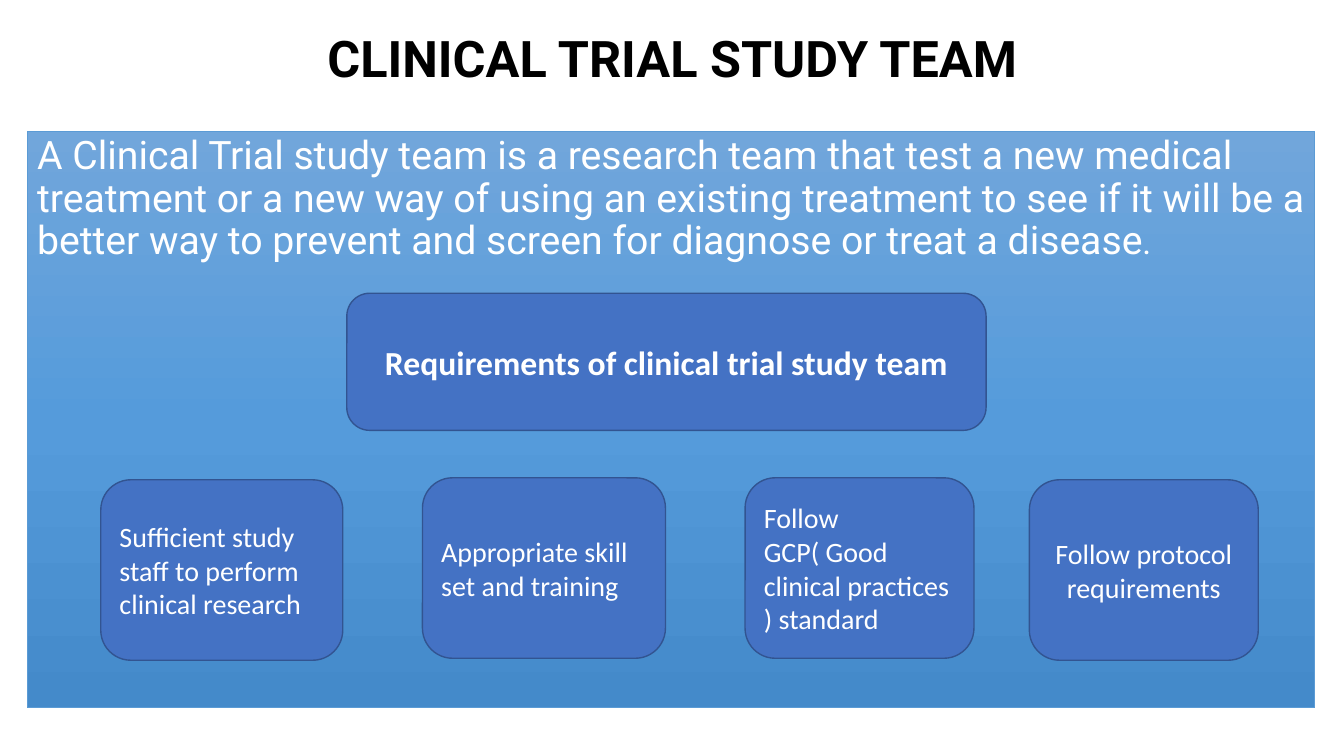
from copy import deepcopy

from pptx import Presentation
from pptx.dml.color import RGBColor
from pptx.enum import shapes, text
from pptx.util import Inches, Pt

BLACK = RGBColor(0x00, 0x00, 0x00)
WHITE = RGBColor(0xFF, 0xFF, 0xFF)
BOX_BLUE = RGBColor(0x44, 0x72, 0xC4)
BOX_EDGE = RGBColor(0x32, 0x54, 0x91)
PANEL_EDGE = RGBColor(0x5B, 0x9B, 0xD5)
PANEL_STOPS = [
    (0, RGBColor(0x71, 0xA6, 0xDB)),
    (0.5, RGBColor(0x55, 0x9B, 0xDB)),
    (1, RGBColor(0x44, 0x8A, 0xCA)),
]

LEFT, CENTER = text.PP_ALIGN.LEFT, text.PP_ALIGN.CENTER
TOP, MIDDLE, BOTTOM = text.MSO_ANCHOR.TOP, text.MSO_ANCHOR.MIDDLE, text.MSO_ANCHOR.BOTTOM

TITLE = "CLINICAL TRIAL STUDY TEAM"
DEFINITION = (
    "A Clinical Trial study team is a research team that test a new medical "
    "treatment or a new way of using an existing treatment to see if it will be a "
    "better way to prevent and screen for diagnose or treat a disease"
)
HEADING = "Requirements of clinical trial study team"
# Wording, left and top within the panel, width, alignment
REQUIREMENTS = [
    ("Sufficient study staff to perform clinical research", 0.73, 3.46, 2.4, LEFT),
    ("Appropriate skill set and training", 3.92, 3.44, 2.41, LEFT),
    ("Follow GCP( Good clinical practices ) standard", 7.12, 3.44, 2.27, LEFT),
    ("Follow protocol requirements", 9.94, 3.46, 2.27, CENTER),
]


def add_run(paragraph, words, **font_format):
    run = paragraph.add_run()
    run.text = words
    color = font_format.pop("color", WHITE)
    for name, value in font_format.items():
        setattr(run.font, name, value)
    run.font.color.rgb = color


def set_paragraph(frame, anchor, align, spacing=1.0):
    frame.word_wrap = True
    frame.vertical_anchor = anchor
    paragraph = frame.paragraphs[0]
    for name, value in {"alignment": align, "line_spacing": spacing}.items():
        setattr(paragraph, name, value)
    return paragraph


def add_outlined(slide, kind, box, edge, weight):
    shape = slide.shapes.add_shape(kind, *map(Inches, box))
    shape.shadow.inherit = False
    shape.line.color.rgb = edge
    shape.line.width = Pt(weight)
    return shape


def add_title(slide, box):
    title = slide.shapes.add_textbox(*map(Inches, box))
    paragraph = set_paragraph(title.text_frame, BOTTOM, CENTER, 0.9)
    add_run(paragraph, TITLE, name="Roboto", size=Pt(36), bold=True, color=BLACK)


def add_requirement_box(slide, box, words, align, size, bold=False):
    card = add_outlined(slide, shapes.MSO_SHAPE.ROUNDED_RECTANGLE, box, BOX_EDGE, 1)
    card.fill.solid()
    card.fill.fore_color.rgb = BOX_BLUE
    paragraph = set_paragraph(card.text_frame, MIDDLE, align)
    add_run(paragraph, words, name="Calibri", size=Pt(size), bold=bold)


def add_panel(slide, box):
    left, top = box[:2]
    panel = add_outlined(slide, shapes.MSO_SHAPE.RECTANGLE, box, PANEL_EDGE, 0.5)

    # Three-stop gradient, light at the top
    panel.fill.gradient()
    panel.fill.gradient_angle = 270
    stop_list = panel.element.find(".//{*}gsLst")
    stop_list.append(deepcopy(stop_list[-1]))
    for stop, (position, color) in zip(panel.fill.gradient_stops, PANEL_STOPS):
        stop.position = position
        stop.color.rgb = color

    # Definition
    paragraph = set_paragraph(panel.text_frame, TOP, LEFT, 0.9)
    add_run(paragraph, DEFINITION, name="Roboto", size=Pt(28))
    add_run(paragraph, ".", name="Roboto", size=Pt(24))

    # Heading box and the row of requirements
    heading_box = (left + 3.17, top + 1.61, 6.34, 1.36)
    add_requirement_box(slide, heading_box, HEADING, CENTER, 24, bold=True)
    for words, dx, dy, width, align in REQUIREMENTS:
        add_requirement_box(slide, (left + dx, top + dy, width, 1.79), words, align, 20)


def main():
    deck = Presentation()
    deck.slide_width, deck.slide_height = Inches(13.33), Inches(7.5)
    slide = deck.slides.add_slide(deck.slide_layouts[6])
    add_title(slide, (1.67, 0, 10, 0.93))
    add_panel(slide, (0.27, 1.3, 12.77, 5.72))
    deck.save("out.pptx")


if __name__ == "__main__":
    main()
